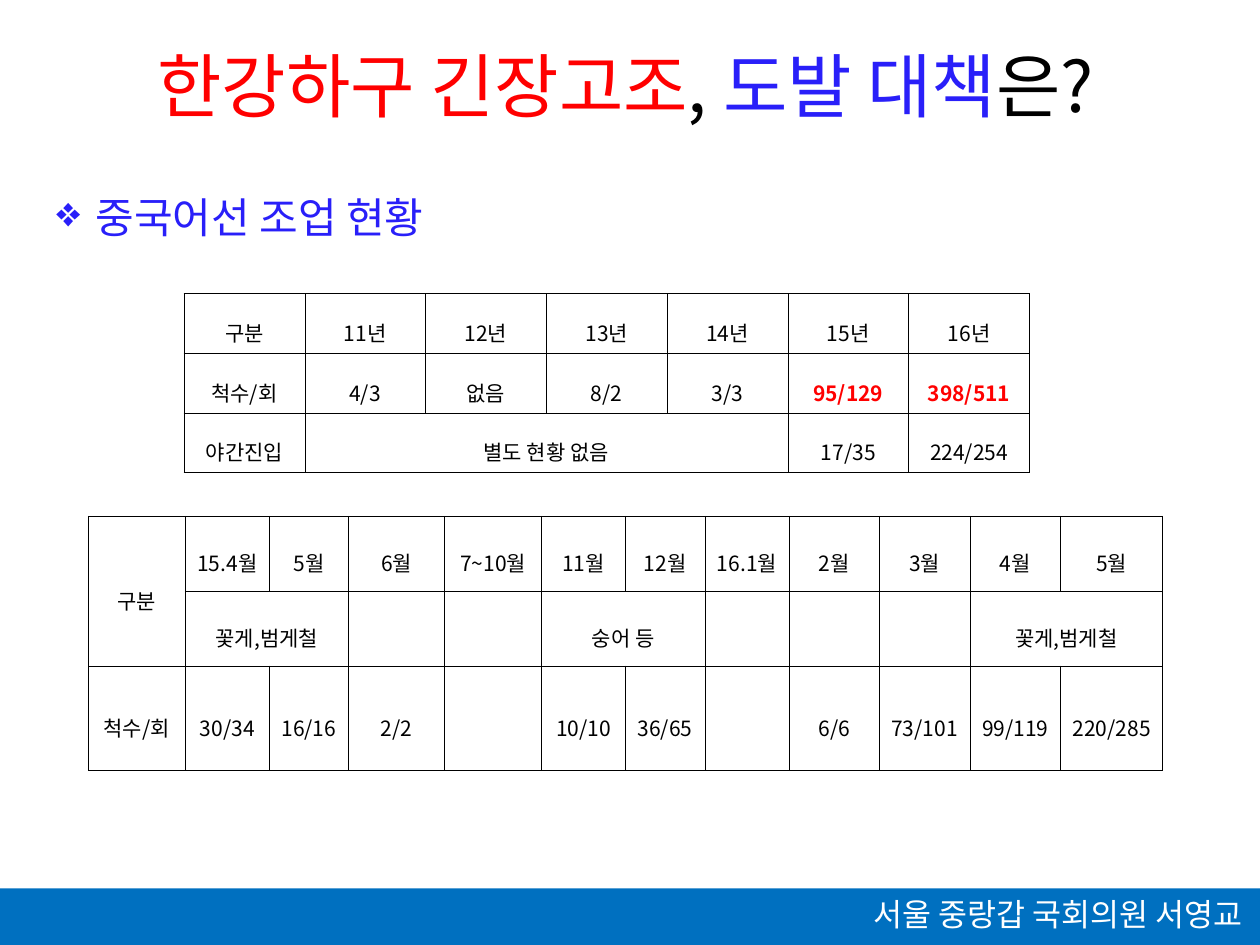
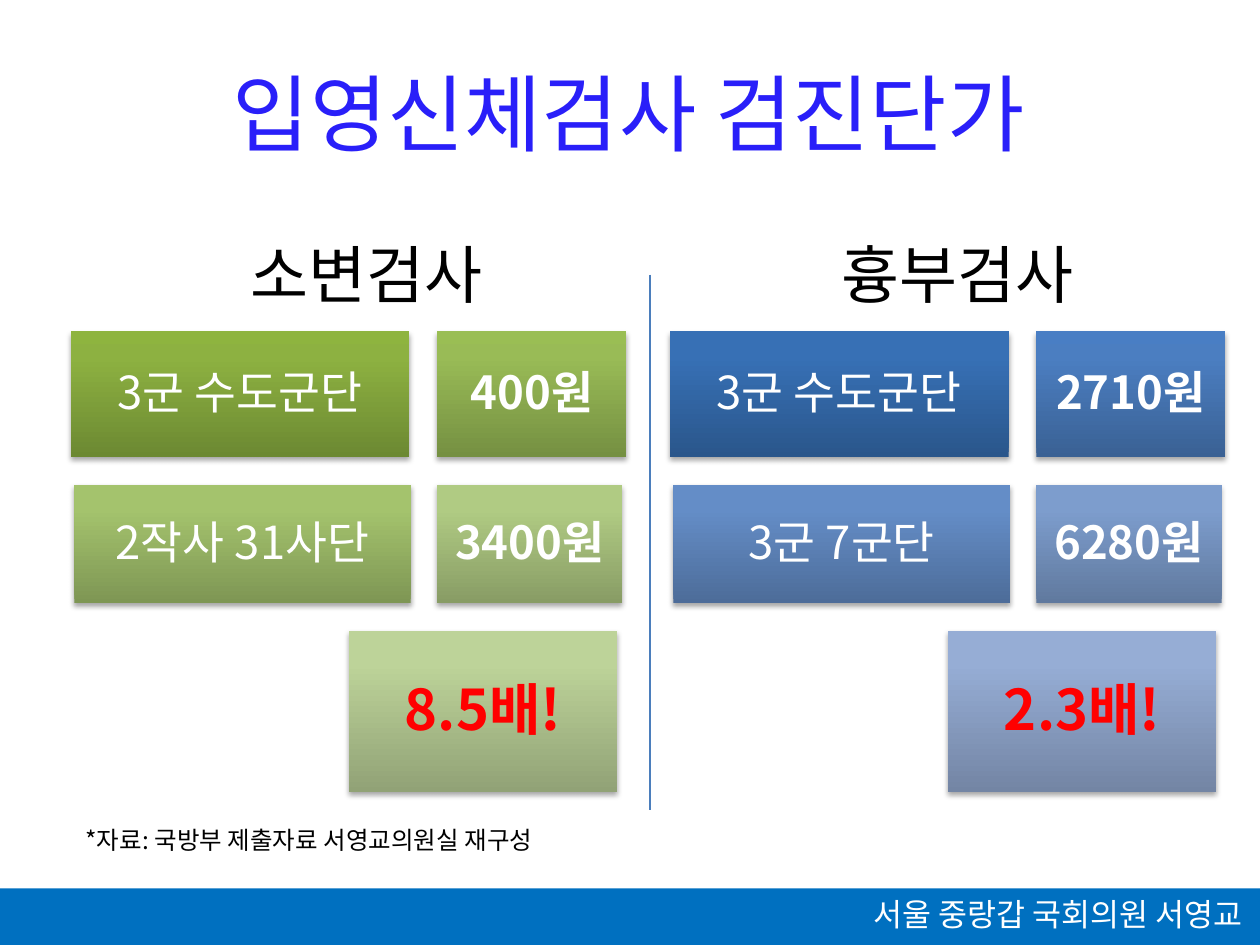
from dataclasses import dataclass
from typing import Any, Optional

import pptx
import pptx.dml.color
import pptx.enum.shapes
import pptx.enum.text
import pptx.oxml
import pptx.oxml.ns
import pptx.util
from lxml import etree

qn = pptx.oxml.ns.qn
Align = pptx.enum.text.PP_ALIGN
Anchor = pptx.enum.text.MSO_ANCHOR


@dataclass(frozen=True)
class Theme:
    font: str = "Noto Sans CJK KR"
    black: str = "000000"
    white: str = "FFFFFF"
    red: str = "FF0000"
    blue: str = "291FF9"
    band: str = "0070C0"
    divider: str = "4B7EBC"
    title_pt: int = 40
    big_title_pt: int = 48
    heading_pt: int = 36
    ratio_pt: int = 32
    tile_pt: int = 26
    bullet_pt: int = 24
    footer_pt: int = 18
    note_pt: int = 14
    cell_pt: int = 12
    border_pt: float = 0.28


THEME = Theme()
GRID_COLUMNS, GRID_ROWS = 100, 75
CELL = pptx.util.Inches(0.1)


def grid(cells: float) -> int:
    """Turn a count of grid cells into a length."""
    return pptx.util.Emu(round(cells * CELL))


@dataclass(frozen=True)
class Area:
    col: float
    row: float
    cols: float
    rows: float

    def lengths(self) -> tuple[int, int, int, int]:
        return grid(self.col), grid(self.row), grid(self.cols), grid(self.rows)


@dataclass(frozen=True)
class Words:
    text: str
    color: str = THEME.black
    bold: bool = False


@dataclass(frozen=True)
class TableSpec:
    col: float
    row: float
    col_widths: tuple[float, ...]
    row_heights: tuple[float, ...]
    rows: tuple[tuple[str, ...], ...]
    merges: tuple[tuple[int, int, int, int], ...]
    alerts: frozenset[str] = frozenset()


@dataclass(frozen=True)
class TileSlot:
    area: Area
    size: int = THEME.tile_pt
    color: str = THEME.white
    bold: bool = False
    inset: float = 1.1


@dataclass(frozen=True)
class Panel:
    """One examination: its heading, and a text and gradient for each tile slot."""
    shift: float
    heading: str
    heading_col: float
    tiles: tuple[tuple[str, tuple[str, str, str]], ...]


FOOTER_BAND = Area(0, 70.5, GRID_COLUMNS, 4.5)
FOOTER_TEXT = Area(60.2, 70.5, 39.4, 4.1)
GRADIENT_POSITIONS = (0, 0.8, 1)

YEARLY = TableSpec(
    14.6, 23.3, (9.59,) * 7, (4.73,) * 3,
    (("구분", "11년", "12년", "13년", "14년", "15년", "16년"),
     ("척수/회", "4/3", "없음", "8/2", "3/3", "95/129", "398/511"),
     ("야간진입", "별도 현황 없음", "", "", "", "17/35", "224/254")),
    ((2, 1, 2, 4),), frozenset({"95/129", "398/511"}))

MONTHLY = TableSpec(
    7, 40.95, (7.7, 6.7, 6.25, 7.65, 7.7, 6.65, 6.3, 6.7, 7.15, 7.2, 7.2, 8.1),
    (5.95, 5.95, 8.25),
    (("구분", "15.4월", "5월", "6월", "7~10월", "11월", "12월", "16.1월",
      "2월", "3월", "4월", "5월"),
     ("", "꽃게,범게철", "", "", "", "숭어 등", "", "", "", "", "꽃게,범게철", ""),
     ("척수/회", "30/34", "16/16", "2/2", "", "10/10", "36/65", "",
      "6/6", "73/101", "99/119", "220/285")),
    ((0, 0, 1, 0), (1, 1, 1, 2), (1, 5, 1, 6), (1, 10, 1, 11)))

TILE_SLOTS = (
    TileSlot(Area(5.6, 26.3, 26.9, 10)),
    TileSlot(Area(34.7, 26.3, 15, 10), bold=True),
    TileSlot(Area(5.9, 38.5, 26.7, 9.4)),
    TileSlot(Area(34.7, 38.5, 14.7, 9.4), bold=True),
    TileSlot(Area(27.7, 50.1, 21.3, 12.8), THEME.ratio_pt, THEME.red, True, 1.3),
)

PANELS = (
    Panel(0, "소변검사", 11, (
        ("3군 수도군단", ("6C8932", "8DB141", "8EB43F")),
        ("400원", ("759042", "99BB56", "9ABE54")),
        ("2작사 31사단", ("7E9654", "A4C36D", "A5C56B")),
        ("3400원", ("889C65", "B0CB83", "B1CD82")),
        ("8.5배!", ("91A276", "BDD399", "BED599")))),
    Panel(47.55, "흉부검사", 57.9, (
        ("3군 수도군단", ("2A568B", "3770B5", "3570B8")),
        ("2710원", ("3A6194", "4B7EC1", "497EC4")),
        ("3군 7군단", ("4D6C99", "648DC7", "638DCA")),
        ("6280원", ("60799E", "7D9DCD", "7C9DD0")),
        ("2.3배!", ("7385A4", "96ADD5", "95ADD7")))),
)


def rgb(code: str) -> pptx.dml.color.RGBColor:
    return pptx.dml.color.RGBColor.from_string(code)


def write(frame: Any, words: tuple[Words, ...], size: int, align: Any,
          line_spacing: Optional[float] = None) -> Any:
    """Fill the first paragraph of a text frame run by run."""
    paragraph = frame.paragraphs[0]
    paragraph.alignment = align
    if line_spacing:
        paragraph.line_spacing = line_spacing
    for part in words:
        run = paragraph.add_run()
        run.text = part.text
        run.font.size = pptx.util.Pt(size)
        run.font.bold = part.bold
        run.font.color.rgb = rgb(part.color)
        run.font.name = THEME.font
        east_asian = etree.SubElement(run._r.get_or_add_rPr(), qn("a:ea"))
        east_asian.set("typeface", THEME.font)
    return paragraph


def fit_to_text(frame: Any) -> None:
    frame.word_wrap = True
    frame.vertical_anchor = Anchor.TOP
    frame.auto_size = pptx.enum.text.MSO_AUTO_SIZE.SHAPE_TO_FIT_TEXT


def add_text(slide: Any, area: Area, words: Words, size: int,
             align: Any = Align.LEFT) -> Any:
    frame = slide.shapes.add_textbox(*area.lengths()).text_frame
    fit_to_text(frame)
    return write(frame, (words,), size, align)


def add_rectangle(slide: Any, area: Area) -> Any:
    rectangle = slide.shapes.add_shape(
        pptx.enum.shapes.MSO_SHAPE.RECTANGLE, *area.lengths())
    rectangle.shadow.inherit = False
    rectangle.line.fill.background()
    return rectangle


def add_titled_slide(deck: Any, area: Area, words: tuple[Words, ...], size: int) -> Any:
    """Add a slide with its title and the shared footer."""
    slide = deck.slides.add_slide(deck.slide_layouts.get_by_name("Title Only"))
    title = slide.shapes.title
    title.left, title.top, title.width, title.height = area.lengths()
    fit_to_text(title.text_frame)
    write(title.text_frame, words, size, Align.CENTER)

    band = add_rectangle(slide, FOOTER_BAND)
    band.fill.solid()
    band.fill.fore_color.rgb = rgb(THEME.band)
    add_text(slide, FOOTER_TEXT, Words("서울 중랑갑 국회의원 서영교", THEME.white),
             THEME.footer_pt, Align.RIGHT)
    return slide


def border_cell(cell: Any) -> None:
    properties = cell._tc.get_or_add_tcPr()
    for side in ("a:lnL", "a:lnR", "a:lnT", "a:lnB"):
        line = etree.SubElement(properties, qn(side))
        line.set("w", str(pptx.util.Pt(THEME.border_pt)))
        fill = etree.SubElement(line, qn("a:solidFill"))
        etree.SubElement(fill, qn("a:srgbClr")).set("val", THEME.black)


def add_data_table(slide: Any, spec: TableSpec) -> None:
    area = Area(spec.col, spec.row, sum(spec.col_widths), sum(spec.row_heights))
    table = slide.shapes.add_table(
        len(spec.row_heights), len(spec.col_widths), *area.lengths()).table
    table.first_row = table.horz_banding = False
    for column, width in zip(table.columns, spec.col_widths):
        column.width = grid(width)
    for row, height in zip(table.rows, spec.row_heights):
        row.height = grid(height)
    for r, texts in enumerate(spec.rows):
        for c, text in enumerate(texts):
            cell = table.cell(r, c)
            cell.margin_left = cell.margin_right = grid(0.7)
            cell.margin_top = cell.margin_bottom = grid(0.2)
            cell.vertical_anchor = Anchor.MIDDLE
            border_cell(cell)
            cell.fill.background()
            if text:
                alert = text in spec.alerts
                words = Words(text, THEME.red if alert else THEME.black, alert)
                write(cell.text_frame, (words,), THEME.cell_pt, Align.CENTER, 1.6)
    for top, left, bottom, right in spec.merges:
        table.cell(top, left).merge(table.cell(bottom, right))


def add_bullet(paragraph: Any, symbol: str, indent: int) -> None:
    properties = paragraph._p.get_or_add_pPr()
    properties.set("marL", str(indent))
    properties.set("indent", str(-indent))
    etree.SubElement(properties, qn("a:buChar")).set("char", symbol)


def shade_upward(shape: Any, colors: tuple[str, str, str]) -> None:
    shape.fill.gradient()
    shape.fill.gradient_angle = 90
    stops = shape.element.spPr.find(".//" + qn("a:gsLst"))
    stops.append(pptx.oxml.parse_xml(etree.tostring(stops[-1])))
    for stop, color, position in zip(shape.fill.gradient_stops, colors, GRADIENT_POSITIONS):
        stop.color.rgb = rgb(color)
        stop.position = position


def cast_shadow(shape: Any) -> None:
    effects = shape.element.spPr.find(qn("a:effectLst"))
    shadow = etree.SubElement(effects, qn("a:outerShdw"), {
        "blurRad": str(pptx.util.Pt(3.1)), "dist": str(pptx.util.Pt(1.8)),
        "dir": "5400000", "rotWithShape": "0"})
    color = etree.SubElement(shadow, qn("a:srgbClr"), val=THEME.black)
    etree.SubElement(color, qn("a:alpha"), val="35000")


def add_tile(slide: Any, slot: TileSlot, shift: float, text: str,
             colors: tuple[str, str, str]) -> None:
    place = slot.area
    tile = add_rectangle(slide, Area(place.col + shift, place.row, place.cols, place.rows))
    shade_upward(tile, colors)
    cast_shadow(tile)
    frame = tile.text_frame
    frame.word_wrap = True
    frame.vertical_anchor = Anchor.MIDDLE
    frame.margin_left = frame.margin_right = grid(slot.inset)
    frame.margin_top = frame.margin_bottom = grid(slot.inset)
    write(frame, (Words(text, slot.color, slot.bold),), slot.size, Align.CENTER, 0.9)


def add_divider(slide: Any, col: float, top: float, bottom: float) -> None:
    divider = slide.shapes.add_connector(
        pptx.enum.shapes.MSO_CONNECTOR.STRAIGHT,
        grid(col), grid(top), grid(col), grid(bottom))
    divider.line.color.rgb = rgb(THEME.divider)
    divider.line.width = pptx.util.Pt(0.75)
    etree.SubElement(divider.element.spPr, qn("a:effectLst"))


def build_fishing_slide(deck: Any) -> None:
    title = (Words("한강하구 긴장고조", THEME.red), Words(", "),
             Words("도발 대책", THEME.blue), Words("은?"))
    slide = add_titled_slide(deck, Area(2.8, 2.9, 93.7, 7.7), title, THEME.title_pt)
    for spec in (YEARLY, MONTHLY):
        add_data_table(slide, spec)
    subject = add_text(slide, Area(3.5, 14.7, 35.4, 5),
                       Words("중국어선 조업 현황", THEME.blue), THEME.bullet_pt)
    add_bullet(subject, "❖", grid(3.1))


def build_price_slide(deck: Any) -> None:
    slide = add_titled_slide(deck, Area(14.4, 4.4, 71, 9.1),
                             (Words("입영신체검사 검진단가", THEME.blue),),
                             THEME.big_title_pt)
    for panel in PANELS:
        for slot, (text, colors) in zip(TILE_SLOTS, panel.tiles):
            add_tile(slide, slot, panel.shift, text, colors)
        add_text(slide, Area(panel.heading_col, 18.2, 36.2, 7.1),
                 Words(panel.heading), THEME.heading_pt, Align.CENTER)
    add_divider(slide, 51.6, 21.8, 64.3)
    add_text(slide, Area(5.8, 65, 47.2, 3.4),
             Words("*자료: 국방부 제출자료 서영교의원실 재구성"), THEME.note_pt)


def main() -> None:
    deck = pptx.Presentation()
    deck.slide_width, deck.slide_height = grid(GRID_COLUMNS), grid(GRID_ROWS)
    build_fishing_slide(deck)
    build_price_slide(deck)
    deck.save("out.pptx")


if __name__ == "__main__":
    main()
